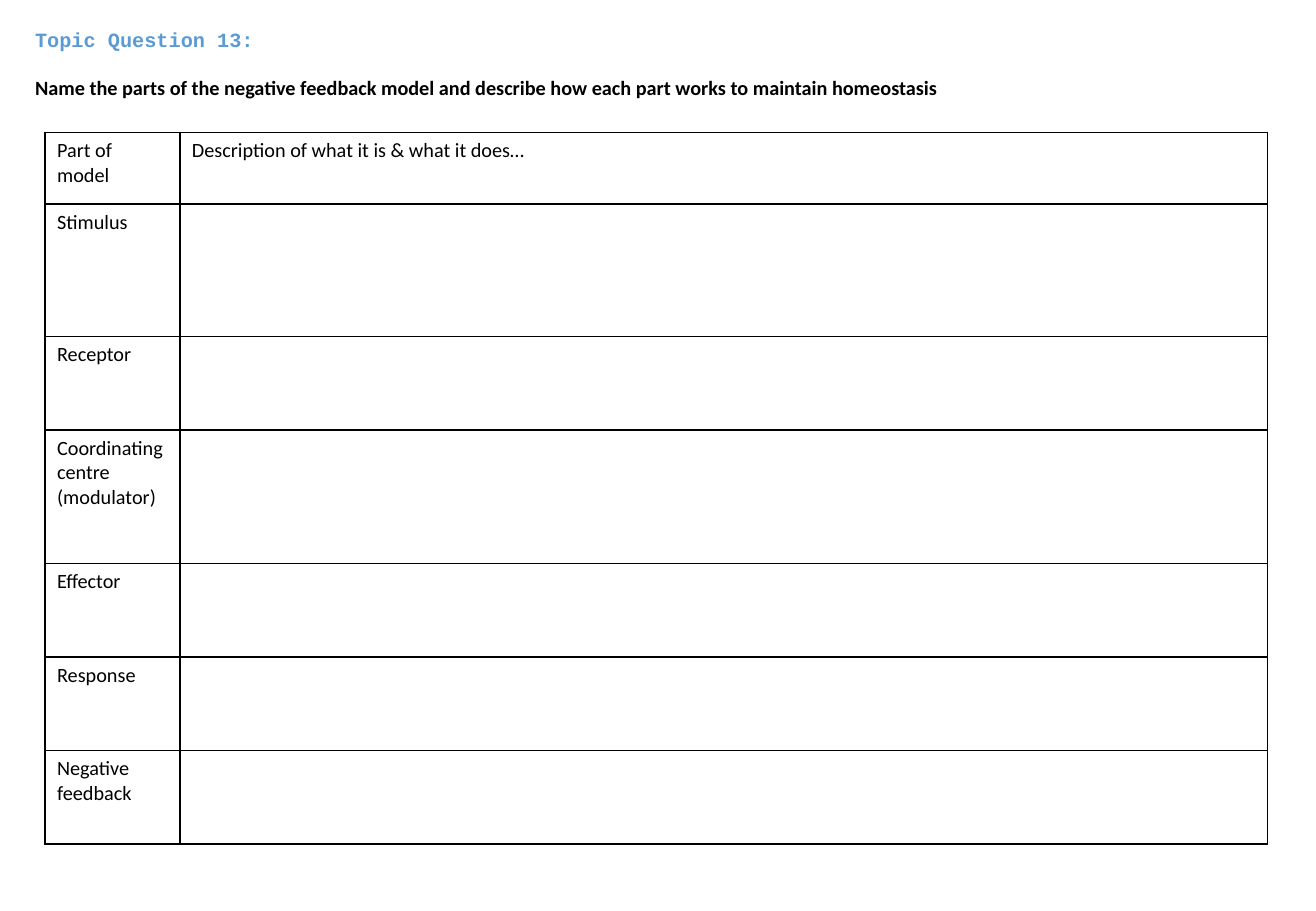
import pptx
import pptx.dml.color
import pptx.enum.text
import pptx.oxml
import pptx.oxml.ns
import pptx.util
from pptx.util import Inches

COLORS = {"heading": "5B9BD5", "text": "000000", "border": "000000"}


def style_text(para, font_name, color, bold=False):
    for span in para.runs:
        span.font.name = font_name
        span.font.size = pptx.util.Pt(12)
        span.font.bold = bold
        span.font.color.rgb = pptx.dml.color.RGBColor.from_string(COLORS[color])


def add_borders(cell):
    """Draw a one-point line on all four sides of a table cell."""
    properties = cell._tc.get_or_add_tcPr()
    for position, side in enumerate(("lnL", "lnR", "lnT", "lnB")):
        line = pptx.oxml.parse_xml(
            f'<a:{side} {pptx.oxml.ns.nsdecls("a")} w="12700"><a:solidFill>'
            f'<a:srgbClr val="{COLORS["border"]}"/></a:solidFill></a:{side}>'
        )
        properties.insert(position, line)


deck = pptx.Presentation()
deck.slide_width = Inches(10.83)
deck.slide_height = Inches(7.5)
page = deck.slides.add_slide(deck.slide_layouts[6])

# Question heading
box = page.shapes.add_textbox(Inches(0.19), Inches(0.34), Inches(8.75), Inches(0.75))
frame = box.text_frame
frame.word_wrap = True
frame.vertical_anchor = pptx.enum.text.MSO_ANCHOR.MIDDLE
frame.margin_top = 0
frame.margin_bottom = Inches(0.38)
frame.text = (
    "Topic Question 13:\n"
    "Name the parts of the negative feedback model and describe "
    "how each part works to maintain homeostasis"
)
heading, question = frame.paragraphs
style_text(heading, "Courier New", "heading", bold=True)
style_text(question, "Calibri", "text", bold=True)
question.space_before = pptx.util.Pt(14)

# Answer table: one row for each part of the model
rows = [
    ("Part of model", "Description of what it is & what it does…", 0.59),
    ("Stimulus", "", 1.09),
    ("Receptor", "", 0.77),
    ("Coordinating centre (modulator)", "", 1.1),
    ("Effector", "", 0.77),
    ("Response", "", 0.77),
    ("Negative feedback", "", 0.77),
]
table = page.shapes.add_table(
    len(rows), 2, Inches(0.37), Inches(1.09), Inches(10.06), Inches(5.84)
).table
table.first_row = False
table.horz_banding = False
for column, width in zip(table.columns, (1.11, 8.95)):
    column.width = Inches(width)

for row, (part, description, height) in zip(table.rows, rows):
    row.height = Inches(height)
    for cell, text in zip(row.cells, (part, description)):
        cell.text = text
        cell.fill.background()
        style_text(cell.text_frame.paragraphs[0], "Calibri", "text")
        add_borders(cell)

deck.save("out.pptx")
